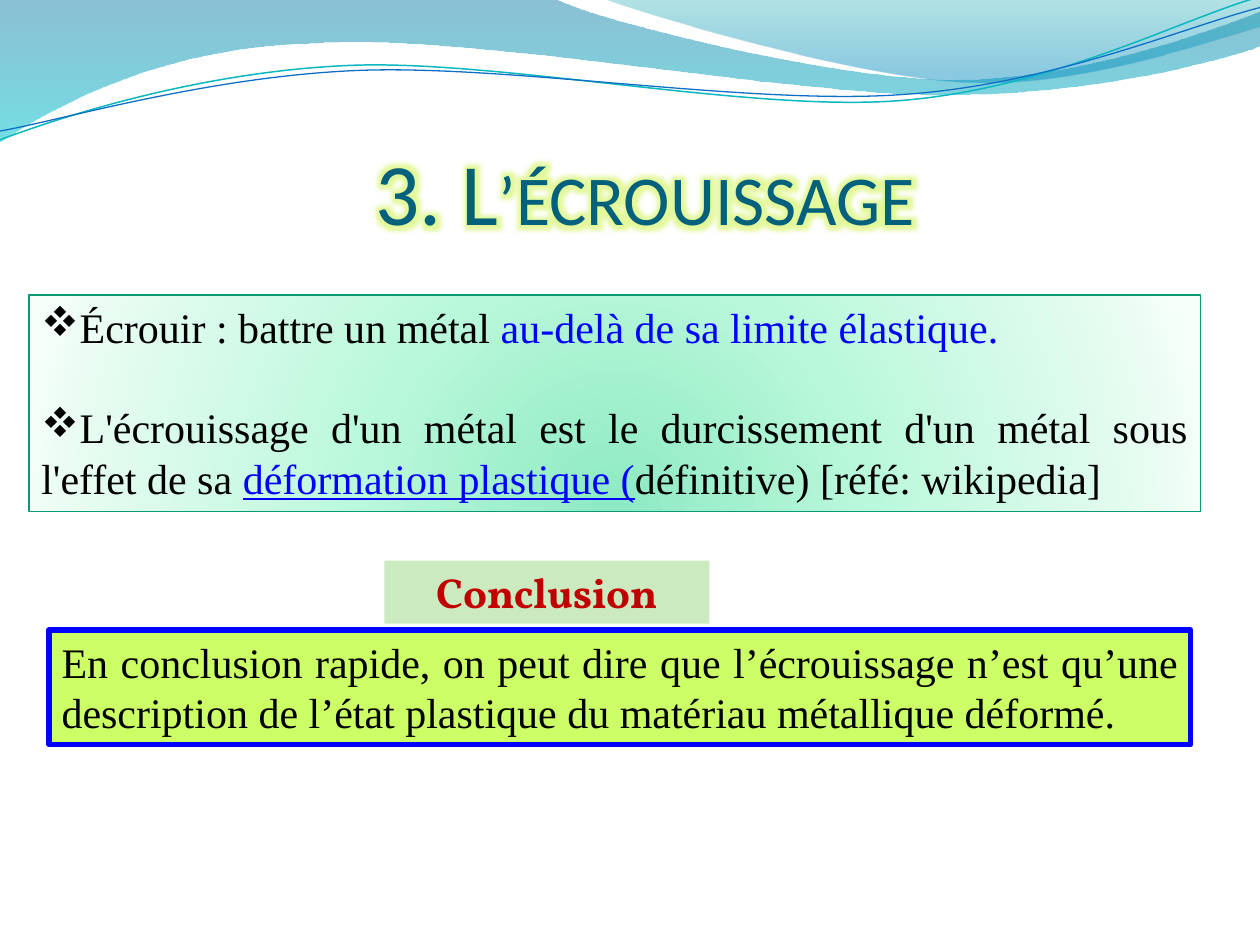
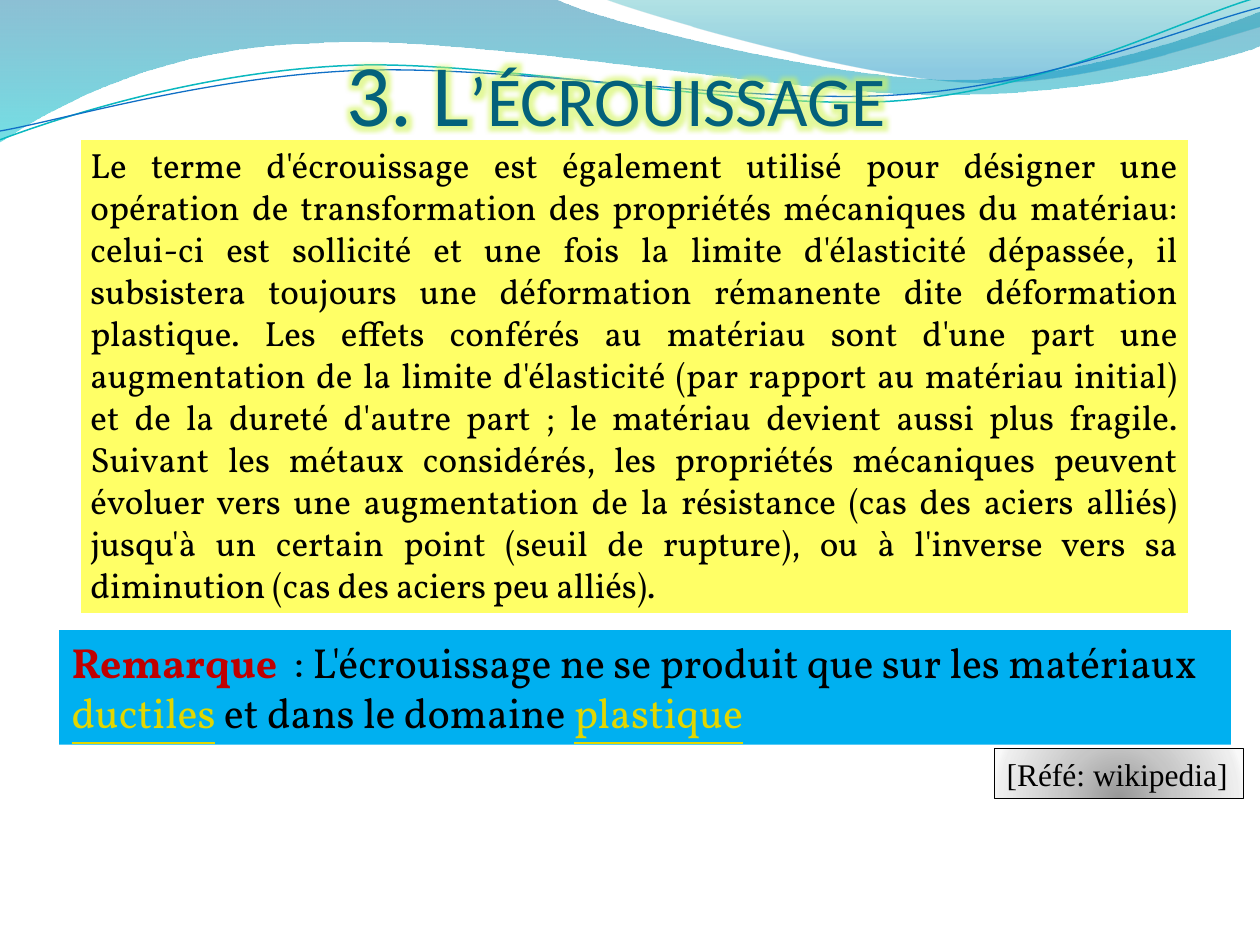
from lxml import etree
from pptx import Presentation
from pptx.dml.color import RGBColor
from pptx.enum.shapes import MSO_SHAPE
from pptx.enum.text import MSO_ANCHOR, PP_ALIGN
from pptx.oxml import parse_xml
from pptx.oxml.ns import nsdecls, qn
from pptx.util import Inches, Pt

RECT = MSO_SHAPE.RECTANGLE
TOP, BOTTOM = MSO_ANCHOR.TOP, MSO_ANCHOR.BOTTOM
LEFT, CENTER, JUSTIFY = PP_ALIGN.LEFT, PP_ALIGN.CENTER, PP_ALIGN.JUSTIFY

COLORS = {
    "title": "04617B", "glow": "D2F55A", "text": "000000", "blue": "0000FF",
    "red": "C00000", "link": "E2D700", "green_line": "0A9B74",
    "lime": "CCFF66", "pale_green": "CBEAC0", "yellow": "FFFF66",
    "sky": "00B0F0", "white": "FFFFFF", "teal_wave": "0AB8BF",
    "blue_wave": "0F6FC6",
}
SERIF, BOOK, SANS = "Times New Roman", "Vollkorn", "Calibri"
DIAMOND = ("Wingdings", "v")  # this font draws the letter as a diamond

# Gradient stops: position, colour, opacity (all in percent where numeric)
BAND_STOPS = [(0, "0074A1", 45), (100, "00C6CF", 55)]
CORNER_STOPS = [(0, "00A1A9", 30), (80, "008BBF", 45)]
MINT_STOPS = [(0, "8DEAC2", 100), (43, "BAF8DB", 100),
              (93, "EAFCF3", 100), (100, "F7FFFB", 100)]
GRAY_STOPS = [(0, "979797", 100), (43, "C6C6C6", 100),
              (93, "EEEEEE", 100), (100, "F9F9F9", 100)]
DOWNWARD = '<a:lin ang="5400000" scaled="0"/>'
FROM_BELOW = ('<a:path path="circle"><a:fillToRect l="50000" t="130000" '
              'r="50000" b="-30000"/></a:path>')

# Header waves: start, segments (1 point = line, 3 points = Bezier curve)
WAVES = [
    {"start": (0, 0), "stops": BAND_STOPS, "segments": [
        [(4.4, -0.01)],
        [(4.76, 0.17), (6.64, 0.63), (7.58, 0.63)],
        [(8.53, 0.63), (9.58, 0.26), (10, 0.09)],
        [(10.01, 0.36)],
        [(9.83, 0.44), (8.7, 0.76), (7.46, 0.75)],
        [(6.22, 0.75), (3.82, 0.28), (2.57, 0.34)],
        [(1.29, 0.36), (0.46, 0.83), (-0.01, 1.13)]]},
    {"start": (4.79, -0.01), "stops": CORNER_STOPS, "segments": [
        [(5.09, 0.11), (6.82, 0.62), (7.69, 0.65)],
        [(8.56, 0.69), (9.61, 0.32), (10, 0.21)],
        [(10, 0)]]},
    {"start": (0, 1.11), "line": ("teal_wave", 0.85), "segments": [
        [(0.48, 0.93), (1.58, 0.57), (2.77, 0.52)],
        [(3.95, 0.47), (5.93, 0.89), (7.13, 0.8)],
        [(8.33, 0.71), (9.38, 0.15), (9.98, -0.02)]]},
    {"start": (0, 1.04), "line": ("blue_wave", 0.75), "segments": [
        [(0.47, 0.96), (1.64, 0.61), (2.83, 0.56)],
        [(4.03, 0.51), (5.97, 0.84), (7.17, 0.75)],
        [(8.36, 0.67), (9.41, 0.21), (10, 0.06)]]},
]


def paint(shape, fill=None, stops=None, direction=DOWNWARD, line=None):
    """Give a shape a solid or gradient fill and an outline (colour, points)."""
    shape.shadow.inherit = False
    shape.fill.background()
    if fill:
        shape.fill.solid()
        shape.fill.fore_color.rgb = RGBColor.from_string(COLORS[fill])
    if stops:
        stop_xml = "".join(
            f'<a:gs pos="{pos * 1000}"><a:srgbClr val="{color}">'
            f'<a:alpha val="{opacity * 1000}"/></a:srgbClr></a:gs>'
            for pos, color, opacity in stops)
        properties = shape.element.spPr
        properties.replace(properties.find(qn("a:noFill")), parse_xml(
            f'<a:gradFill {nsdecls("a")} rotWithShape="1">'
            f'<a:gsLst>{stop_xml}</a:gsLst>{direction}</a:gradFill>'))
    shape.line.fill.background()
    if line:
        shape.line.color.rgb = RGBColor.from_string(COLORS[line[0]])
        shape.line.width = Pt(line[1])


def add_text(slide, at, paragraphs, size=24, font=SERIF, align=JUSTIFY,
             anchor=TOP, insets=(0.1, 0.05, 0.1, 0.05), wrap=True,
             bullet=None, gap=0, glow=False, **look):
    """Add a text box, painted if asked; a run is (text, colour, *styles)."""
    area = [Inches(length) for length in at]
    if look:
        box = slide.shapes.add_shape(RECT, *area)
        paint(box, **look)
    else:
        box = slide.shapes.add_textbox(*area)
    frame = box.text_frame
    frame.word_wrap = wrap
    frame.vertical_anchor = anchor
    (frame.margin_left, frame.margin_top,
     frame.margin_right, frame.margin_bottom) = map(Inches, insets)
    for number, runs in enumerate(paragraphs):
        paragraph = frame.add_paragraph() if number else frame.paragraphs[0]
        paragraph.alignment = align
        if number:
            paragraph.space_before = Pt(gap)
        if bullet:
            properties = paragraph._p.get_or_add_pPr()
            etree.SubElement(properties, qn("a:buFont"), typeface=bullet[0])
            etree.SubElement(properties, qn("a:buChar"), char=bullet[1])
        for text, color, *styles in runs:
            run = paragraph.add_run()
            run.text = text
            run.font.size = Pt(size)
            run.font.name = font
            run.font.color.rgb = RGBColor.from_string(COLORS[color])
            run.font.bold = "bold" in styles
            run.font.underline = "underline" in styles
            properties = run._r.get_or_add_rPr()
            if "small caps" in styles:
                properties.set("cap", "small")
            if glow:
                properties.find(qn("a:solidFill")).addnext(parse_xml(
                    f'<a:effectLst {nsdecls("a")}><a:glow rad="127000">'
                    f'<a:srgbClr val="{COLORS["glow"]}"><a:alpha val="60000"/>'
                    '</a:srgbClr></a:glow></a:effectLst>'))


prs = Presentation()
prs.slide_width, prs.slide_height = Inches(10), Inches(7.5)

# Shared header waves and title
slides = []
for title_left, title_top in [(0.62, 1.02), (0.39, 0.23)]:
    slide = prs.slides.add_slide(prs.slide_layouts[6])
    for wave in WAVES:
        points = [(Inches(x), Inches(y))
                  for segment in wave["segments"] for x, y in segment]
        builder = slide.shapes.build_freeform(*map(Inches, wave["start"]))
        builder.add_line_segments(points, close="stops" in wave)
        wave_shape = builder.convert_to_shape()
        # Join each three straight steps of a curve into one Bezier
        steps = iter(list(wave_shape.element.iter(qn("a:lnTo"))))
        for segment in wave["segments"]:
            first, *others = [next(steps) for _ in segment]
            if others:
                curve = etree.Element(qn("a:cubicBezTo"))
                first.addprevious(curve)
                for step in (first, *others):
                    curve.append(step[0])
                    step.getparent().remove(step)
        paint(wave_shape, stops=wave.get("stops"), line=wave.get("line"))
    add_text(slide, (title_left, title_top, 9, 0.91),
             [[("3. ", "title"), ("L’écrouissage", "title", "small caps")]],
             size=50, font=SANS, align=CENTER, anchor=BOTTOM,
             insets=(0, 0.05, 0, 0), glow=True)
    slides.append(slide)
definition_slide, usage_slide = slides

# Slide 1: definition and conclusion
add_text(definition_slide, (0.23, 2.34, 9.3, 1.72), [
    [("Écrouir : battre un métal ", "text"),
     ("au-delà de sa limite élastique.", "blue")],
    [("L'écrouissage d'un métal est le durcissement d'un métal sous l'effet "
      "de sa ", "text"),
     ("déformation plastique (", "blue", "underline"),
     ("définitive) [réfé: wikipedia]", "text")],
], bullet=DIAMOND, gap=28.8, stops=MINT_STOPS, direction=FROM_BELOW,
    line=("green_line", 0.75))
add_text(definition_slide, (0.39, 5, 9.06, 0.91), [[
    ("En conclusion rapide, on peut dire que l’écrouissage n’est qu’une "
     "description de l’état plastique du matériau métallique déformé.",
     "text")]], fill="lime", line=("blue", 3))
add_text(definition_slide, (3.05, 4.45, 2.58, 0.5),
         [[("Conclusion", "red", "bold")]], font=BOOK, align=CENTER,
         fill="pale_green")

# Slide 2: usage, remark and reference
add_text(usage_slide, (0.62, 1.09, 8.83, 3.8), [[
    ("Le terme d'écrouissage est également utilisé pour désigner une "
     "opération de transformation des propriétés mécaniques du matériau: "
     "celui-ci est sollicité et une fois la limite d'élasticité dépassée, il "
     "subsistera toujours une déformation rémanente dite déformation "
     "plastique. Les effets conférés au matériau sont d'une part une "
     "augmentation de la limite d'élasticité (par rapport au matériau "
     "initial) et de la dureté d'autre part ; le matériau devient aussi plus "
     "fragile. Suivant les métaux considérés, les propriétés mécaniques "
     "peuvent évoluer vers une augmentation de la résistance (cas des aciers "
     "alliés) jusqu'à un certain point (seuil de rupture), ou à l'inverse "
     "vers sa diminution (cas des aciers peu alliés).", "text")]],
    size=20, font=BOOK, fill="yellow", line=("white", 3))
add_text(usage_slide, (0.47, 5, 9.3, 0.91), [[
    ("Remarque ", "red", "bold"),
    (" : L'écrouissage ne se produit que sur les matériaux ", "text"),
    ("ductiles", "link", "underline"),
    (" et dans le domaine ", "text"),
    ("plastique", "link", "underline")]],
    font=BOOK, align=LEFT, fill="sky")
add_text(usage_slide, (7.89, 5.94, 1.98, 0.4),
         [[("[Réfé: wikipedia]", "text")]], size=18, align=LEFT, wrap=False,
         stops=GRAY_STOPS, direction=FROM_BELOW, line=("text", 0.75))

prs.save("out.pptx")
